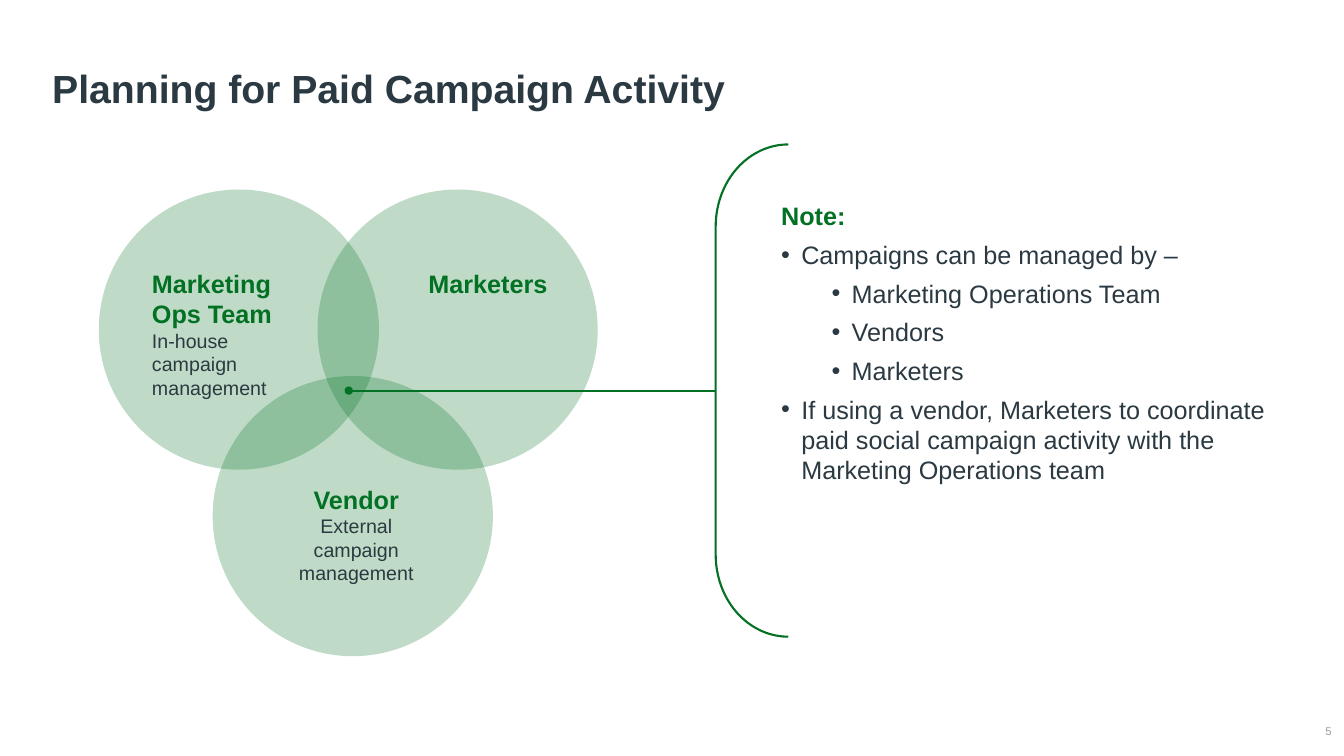
"""Build the paid campaign planning slide with a Venn diagram and a note."""
from typing import NamedTuple

from lxml import etree
from pptx import Presentation
from pptx.dml.color import RGBColor
from pptx.enum import shapes, text
from pptx.oxml import ns
from pptx.util import Pt

GREEN = RGBColor(0x02, 0x71, 0x23)
SLATE = RGBColor(0x2B, 0x3A, 0x42)
GREY = RGBColor(0x95, 0x9C, 0xA0)
WHITE = RGBColor(0xFF, 0xFF, 0xFF)
FONT = "Arial"
DIAMETER = 200.16
LINE_WIDTH = 1.5
LEFT, CENTER, RIGHT = text.PP_ALIGN.LEFT, text.PP_ALIGN.CENTER, text.PP_ALIGN.RIGHT


class Line(NamedTuple):
    """One paragraph of text."""
    words: str
    size: float
    color: RGBColor = SLATE
    bold: bool = False
    align: text.PP_ALIGN = LEFT
    level: int = 0
    bullet_indent: float = 0
    after: float = 0
    spacing: float = 1.0


class Box(NamedTuple):
    """A text box with its paragraphs."""
    left: float
    top: float
    width: float
    height: float
    lines: list[Line]
    inset_x: float = 0
    inset_y: float = 0
    anchor: text.MSO_ANCHOR = text.MSO_ANCHOR.TOP


class Circle(NamedTuple):
    """One circle of the Venn diagram with its label."""
    left: float
    top: float
    label_left: float
    label_top: float
    align: text.PP_ALIGN
    heading: str
    detail: str = ""


CIRCLES = [
    Circle(70.56, 135.36, 101.52, 191.52, LEFT,
           "Marketing Ops Team", "In-house campaign management"),
    Circle(226.8, 135.36, 277.92, 191.52, RIGHT, "Marketers"),
    Circle(151.92, 268.56, 194.4, 345.6, CENTER,
           "Vendor", "External campaign management"),
]
NOTES = [
    (0, "Campaigns can be managed by –"),
    (1, "Marketing Operations Team"),
    (1, "Vendors"),
    (1, "Marketers"),
    (0, "If using a vendor, Marketers to coordinate paid social campaign "
        "activity with the Marketing Operations team"),
]
NUMBER = Box(923.04, 515.52, 28.08, 13.68, [Line("5", 8, GREY, align=RIGHT)],
             anchor=text.MSO_ANCHOR.MIDDLE)
TITLE = Box(30.24, 23.04, 892.8, 60.48,
            [Line("Planning for Paid Campaign Activity", 28, bold=True, spacing=0.9)],
            7.2, 3.6, text.MSO_ANCHOR.BOTTOM)
NOTE = Box(558, 143.28, 350.64, 271.44,
           [Line("Note:", 18, GREEN, True, after=6)]
           + [Line(words, 18, level=level, bullet_indent=14.4 + 36 * level, after=6)
              for level, words in NOTES])


def add_bullet(p, indent: float) -> None:
    """Give a paragraph a hanging bullet."""
    pPr = p._p.get_or_add_pPr()
    pPr.set("marL", str(Pt(indent)))
    pPr.set("indent", str(-Pt(14.4)))
    font = etree.SubElement(pPr, ns.qn("a:buFont"))
    font.set("typeface", FONT)
    bullet = etree.SubElement(pPr, ns.qn("a:buChar"))
    bullet.set("char", "•")


def add_box(slide, box: Box) -> None:
    """Draw a text box."""
    s = slide.shapes.add_textbox(Pt(box.left), Pt(box.top), Pt(box.width), Pt(box.height))
    tf = s.text_frame
    tf.word_wrap = True
    tf.vertical_anchor = box.anchor
    tf.margin_left = tf.margin_right = Pt(box.inset_x)
    tf.margin_top = tf.margin_bottom = Pt(box.inset_y)
    tf.text = "\n".join(line.words for line in box.lines)
    for p, line in zip(tf.paragraphs, box.lines):
        p.alignment = line.align
        p.level = line.level
        p.line_spacing = line.spacing
        p.space_after = Pt(line.after)
        if line.bullet_indent:
            add_bullet(p, line.bullet_indent)
        for r in p.runs:
            r.font.name = FONT
            r.font.size = Pt(line.size)
            r.font.bold = line.bold
            r.font.color.rgb = line.color


def add_circle(slide, circle: Circle) -> None:
    """Draw one translucent circle."""
    s = slide.shapes.add_shape(shapes.MSO_SHAPE.OVAL, Pt(circle.left), Pt(circle.top),
                               Pt(DIAMETER), Pt(DIAMETER))
    s.shadow.inherit = False
    s.fill.solid()
    s.fill.fore_color.rgb = GREEN
    s.line.fill.background()
    color = s.element.spPr.find(ns.qn("a:solidFill")).find(ns.qn("a:srgbClr"))
    etree.SubElement(color, ns.qn("a:alpha")).set("val", "25000")


def add_label(slide, circle: Circle) -> None:
    """Write the label of one circle."""
    lines = [Line(circle.heading, 18, GREEN, True, circle.align)]
    if circle.detail:
        lines.append(Line(circle.detail, 14, align=circle.align))
    add_box(slide, Box(circle.label_left, circle.label_top, 120.24, 78.48, lines, 7.2))


def add_bracket(slide) -> None:
    """Draw the bracket and the line that ties it to the overlap."""
    s = slide.shapes.add_shape(shapes.MSO_SHAPE.LEFT_BRACKET, Pt(511.2), Pt(103.2),
                               Pt(51.84), Pt(351.6))
    s.adjustments[0] = 1.13
    s.shadow.inherit = False
    s.fill.background()
    s.line.color.rgb = GREEN
    s.line.width = Pt(LINE_WIDTH)
    link = slide.shapes.add_connector(shapes.MSO_CONNECTOR.STRAIGHT, Pt(511.2), Pt(279),
                                      Pt(249.12), Pt(279))
    link.begin_connect(s, 1)
    link.line.color.rgb = GREEN
    link.line.width = Pt(LINE_WIDTH)
    etree.SubElement(link.line._get_or_add_ln(), ns.qn("a:tailEnd")).set("type", "oval")
    etree.SubElement(link._element.spPr, ns.qn("a:effectLst"))


def main() -> None:
    """Build and save the slide."""
    prs = Presentation()
    prs.slide_width, prs.slide_height = Pt(960), Pt(540)
    slide = prs.slides.add_slide(prs.slide_layouts[6])
    slide.background.fill.solid()
    slide.background.fill.fore_color.rgb = WHITE
    add_box(slide, NUMBER)
    add_box(slide, TITLE)
    for circle in CIRCLES:
        add_circle(slide, circle)
    add_bracket(slide)
    add_box(slide, NOTE)
    for circle in CIRCLES:
        add_label(slide, circle)
    prs.save("out.pptx")


if __name__ == "__main__":
    main()
